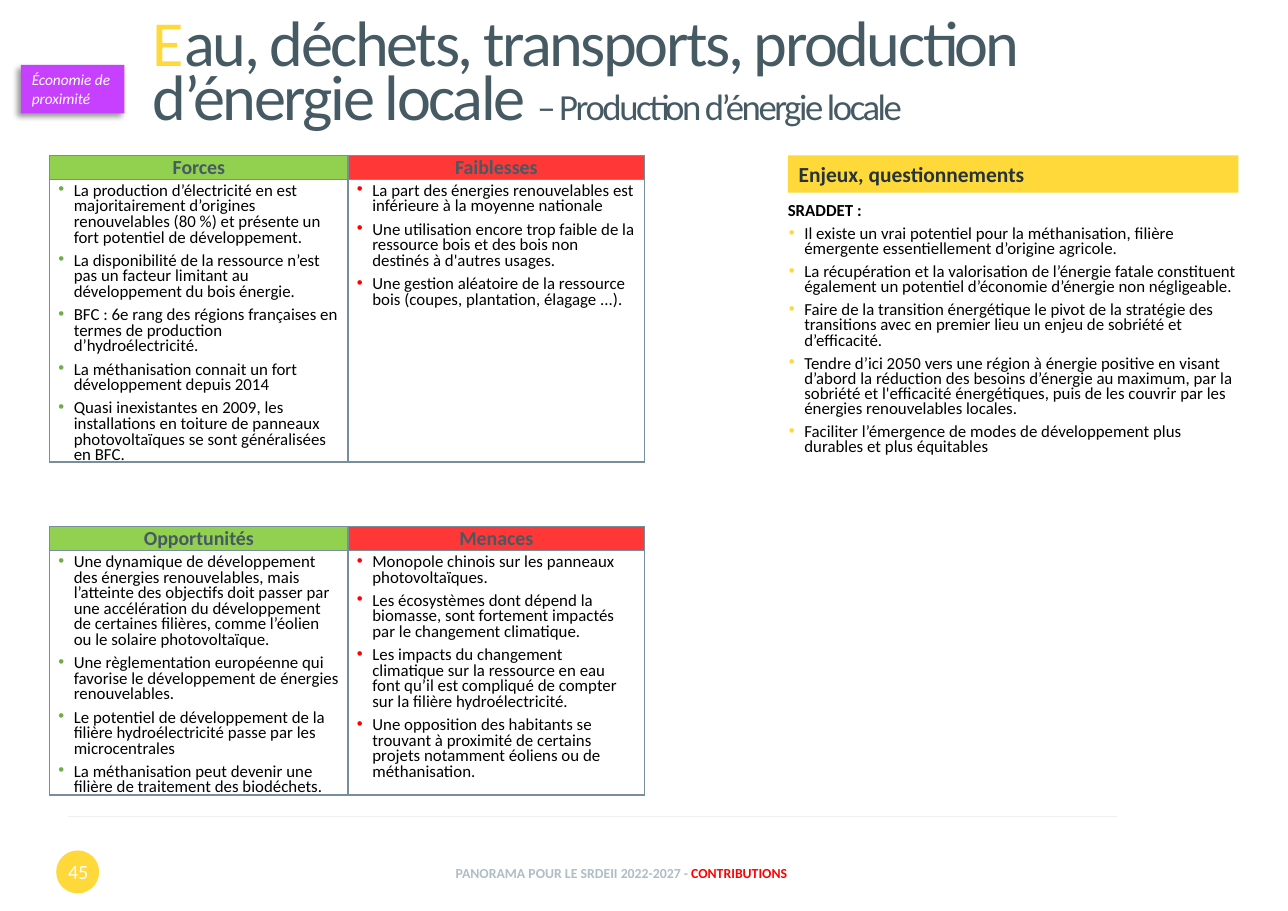
from lxml import etree
from pptx import Presentation
from pptx.dml.color import RGBColor
from pptx.enum.shapes import MSO_CONNECTOR, MSO_SHAPE
from pptx.enum.text import MSO_ANCHOR, PP_ALIGN
from pptx.oxml.ns import qn
from pptx.util import Inches, Pt

WHITE = RGBColor(0xFF, 0xFF, 0xFF)
BLACK = RGBColor(0x00, 0x00, 0x00)
YELLOW = RGBColor(0xFF, 0xD8, 0x3A)
PURPLE = RGBColor(0xC7, 0x40, 0xFF)
SLATE = RGBColor(0x46, 0x5A, 0x64)
DARK = RGBColor(0x26, 0x33, 0x38)
GREY = RGBColor(0xAE, 0xBE, 0xC4)
PALE = RGBColor(0xEC, 0xF0, 0xF2)
BORDER = RGBColor(0x78, 0x8F, 0x9B)
RED = RGBColor(0xFF, 0x00, 0x00)
HEAD_GREEN = RGBColor(0x92, 0xD0, 0x50)
HEAD_RED = RGBColor(0xFF, 0x37, 0x37)
BULLET_GREEN = RGBColor(0x70, 0xAD, 0x47)

FORCES = [
    "La production d’électricité en est majoritairement d’origines renouvelables (80 %) et présente un fort potentiel de développement.",
    "La disponibilité de la ressource n’est pas un facteur limitant au développement du bois énergie.",
    "BFC : 6e rang des régions françaises en termes de production d’hydroélectricité.",
    "La méthanisation connait un fort développement depuis 2014",
    "Quasi inexistantes en 2009, les installations en toiture de panneaux photovoltaïques se sont généralisées en BFC.",
]
FAIBLESSES = [
    "La part des énergies renouvelables est inférieure à la moyenne nationale",
    "Une utilisation encore trop faible de la ressource bois et des bois non destinés à d'autres usages.",
    "Une gestion aléatoire de la ressource bois (coupes, plantation, élagage ...).",
]
OPPORTUNITES = [
    "Une dynamique de développement des énergies renouvelables, mais l’atteinte des objectifs doit passer par une accélération du développement de certaines filières, comme l’éolien ou le solaire photovoltaïque.",
    "Une règlementation européenne qui favorise le développement de énergies renouvelables.",
    "Le potentiel de développement de la filière hydroélectricité passe par les microcentrales",
    "La méthanisation peut devenir une filière de traitement des biodéchets.",
]
MENACES = [
    "Monopole chinois sur les panneaux photovoltaïques.",
    "Les écosystèmes dont dépend la biomasse, sont fortement impactés par le changement climatique.",
    "Les impacts du changement climatique sur la ressource en eau font qu’il est compliqué de compter sur la filière hydroélectricité.",
    "Une opposition des habitants se trouvant à proximité de certains projets notamment éoliens ou de méthanisation.",
]
ENJEUX = [
    "Il existe un vrai potentiel pour la méthanisation, filière émergente essentiellement d’origine agricole.",
    "La récupération et la valorisation de l’énergie fatale constituent également un potentiel d’économie d’énergie non négligeable.",
    "Faire de la transition énergétique le pivot de la stratégie des transitions avec en premier lieu un enjeu de sobriété et d’efficacité.",
    "Tendre d’ici 2050 vers une région à énergie positive en visant d’abord la réduction des besoins d’énergie au maximum, par la sobriété et l'efficacité énergétiques, puis de les couvrir par les énergies renouvelables locales.",
    "Faciliter l’émergence de modes de développement plus durables et plus équitables",
]


def add_run(p, text, size=11, color=BLACK, bold=False, italic=False, spacing=None):
    r = p.add_run()
    r.text = text
    f = r.font
    f.name, f.size, f.bold, f.italic = "Calibri", Pt(size), bold, italic
    f.color.rgb = color
    if spacing is not None:
        r._r.get_or_add_rPr().set("spc", str(round(spacing * 100)))


def next_paragraph(tf):
    """Return the unused first paragraph of the frame, or a new one."""
    return tf.add_paragraph() if tf.paragraphs[0].runs else tf.paragraphs[0]


def add_items(tf, items, bullet_color):
    for text in items:
        p = next_paragraph(tf)
        pPr = p._p.get_or_add_pPr()
        pPr.set("marL", str(Inches(0.15)))
        pPr.set("indent", str(Inches(-0.14)))
        color = etree.SubElement(pPr, qn("a:buClr"))
        etree.SubElement(color, qn("a:srgbClr"), val=str(bullet_color))
        etree.SubElement(pPr, qn("a:buFont"), typeface="Arial")
        etree.SubElement(pPr, qn("a:buChar"), char="•")
        set_list_spacing(p, first=p._p is tf.paragraphs[0]._p)
        add_run(p, text)


def set_list_spacing(p, first):
    p.line_spacing = 0.75
    p.space_before = Pt(0 if first else 2)
    p.space_after = Pt(3)


def set_borders(cell):
    tcPr = cell._tc.get_or_add_tcPr()
    for side in "LRTB":
        ln = etree.SubElement(tcPr, qn(f"a:ln{side}"), w=str(Pt(1)))
        fill = etree.SubElement(ln, qn("a:solidFill"))
        etree.SubElement(fill, qn("a:srgbClr"), val=str(BORDER))


class SwotSlide:
    def __init__(self, prs):
        self.s = prs.slides.add_slide(prs.slide_layouts[6])

    def line(self, x1, y1, x2, y2, color, width):
        c = self.s.shapes.add_connector(
            MSO_CONNECTOR.STRAIGHT, Inches(x1), Inches(y1), Inches(x2), Inches(y2))
        c.line.color.rgb = color
        c.line.width = Pt(width)
        etree.SubElement(c._element.spPr, qn("a:effectLst"))

    def shape(self, kind, x, y, w, h, fill):
        sp = self.s.shapes.add_shape(kind, Inches(x), Inches(y), Inches(w), Inches(h))
        sp.shadow.inherit = False
        sp.fill.solid()
        sp.fill.fore_color.rgb = fill
        sp.line.fill.background()
        tf = sp.text_frame
        tf.word_wrap = True
        tf.vertical_anchor = MSO_ANCHOR.TOP
        tf.paragraphs[0].alignment = PP_ALIGN.LEFT
        return sp

    def text(self, x, y, w, h, runs, align=PP_ALIGN.CENTER,
             anchor=MSO_ANCHOR.MIDDLE, line_spacing=None):
        tf = self.s.shapes.add_textbox(Inches(x), Inches(y), Inches(w), Inches(h)).text_frame
        tf.word_wrap = True
        tf.vertical_anchor = anchor
        p = tf.paragraphs[0]
        p.alignment = align
        p.line_spacing = line_spacing
        for text, style in runs:
            add_run(p, text, **style)

    def tag(self, x, y, w, h, text):
        """Add a purple label with a soft shadow at its lower left."""
        sp = self.shape(MSO_SHAPE.RECTANGLE, x, y, w, h, PURPLE)
        effects = sp._element.spPr.find(qn("a:effectLst"))
        shadow = etree.SubElement(effects, qn("a:outerShdw"), blurRad=str(Pt(4)),
                                  dist=str(Pt(3)), dir=str(135 * 60000), rotWithShape="0")
        color = etree.SubElement(shadow, qn("a:srgbClr"), val=str(BLACK))
        etree.SubElement(color, qn("a:alpha"), val="40000")
        add_run(sp.text_frame.paragraphs[0], text, size=10, color=WHITE, italic=True)

    def issues(self, x, y, w, heading, lead, items):
        tf = self.shape(MSO_SHAPE.RECTANGLE, x, y + 0.4, w, 5.27, WHITE).text_frame
        tf.margin_left = tf.margin_right = 0
        p = tf.paragraphs[0]
        set_list_spacing(p, first=True)
        add_run(p, lead, bold=True)
        add_items(tf, items, YELLOW)
        band = self.shape(MSO_SHAPE.RECTANGLE, x, y, w, 0.34, YELLOW)
        add_run(band.text_frame.paragraphs[0], heading, size=14, color=DARK, bold=True)

    def swot_table(self, y, h, columns):
        head_h = 0.22
        table = self.s.shapes.add_table(
            2, 2, Inches(0.45), Inches(y), Inches(5.4), Inches(h)).table
        table.first_row = table.horz_banding = False
        table.rows[0].height = Inches(head_h)
        table.rows[1].height = Inches(h - head_h)
        looks = [(2.71, HEAD_GREEN, BULLET_GREEN), (2.69, HEAD_RED, RED)]
        for i, ((heading, items), (w, fill, bullet)) in enumerate(zip(columns, looks)):
            table.columns[i].width = Inches(w)
            head, body = table.cell(0, i), table.cell(1, i)
            for cell, color, margin in ((head, fill, 0), (body, WHITE, 0.04)):
                cell.margin_left = cell.margin_right = Inches(0.07)
                cell.margin_top = cell.margin_bottom = Inches(margin)
                set_borders(cell)
                cell.fill.solid()
                cell.fill.fore_color.rgb = color
            p = head.text_frame.paragraphs[0]
            p.alignment = PP_ALIGN.CENTER
            add_run(p, heading, size=13, color=SLATE, bold=True)
            add_items(body.text_frame, items, bullet)


def main():
    prs = Presentation()
    prs.slide_width, prs.slide_height = Inches(11.69), Inches(8.27)
    slide = SwotSlide(prs)
    slide.line(10.14, 7.41, 0.62, 7.41, PALE, 0.5)
    slide.shape(MSO_SHAPE.OVAL, 0.51, 7.72, 0.39, 0.39, YELLOW)
    slide.text(0.45, 7.69, 0.52, 0.44, [("45", dict(size=13.2, color=WHITE))])
    slide.tag(0.19, 0.59, 0.94, 0.44, "Économie de proximité")
    slide.issues(7.15, 1.41, 4.09, "Enjeux, questionnements", "SRADDET :", ENJEUX)
    slide.text(1.12, 7.71, 9.04, 0.44, [
        ("PANORAMA POUR LE SRDEII 2022-2027 - ", dict(size=9, color=GREY, bold=True)),
        ("CONTRIBUTIONS", dict(size=9, color=RED, bold=True)),
    ])
    slide.text(1.29, 0.12, 9.94, 1.12, [
        ("E", dict(size=42, color=YELLOW, spacing=-1.6)),
        ("au, déchets, transports, production d’énergie locale ",
         dict(size=42, color=SLATE, spacing=-1.6)),
        ("– Production d’énergie locale", dict(size=24, color=SLATE, spacing=-1.6)),
    ], align=PP_ALIGN.LEFT, anchor=MSO_ANCHOR.BOTTOM, line_spacing=0.7)
    slide.swot_table(1.41, 2.77, [("Forces", FORCES), ("Faiblesses", FAIBLESSES)])
    slide.swot_table(4.78, 2.43, [("Opportunités", OPPORTUNITES), ("Menaces", MENACES)])
    prs.save("out.pptx")


if __name__ == "__main__":
    main()
